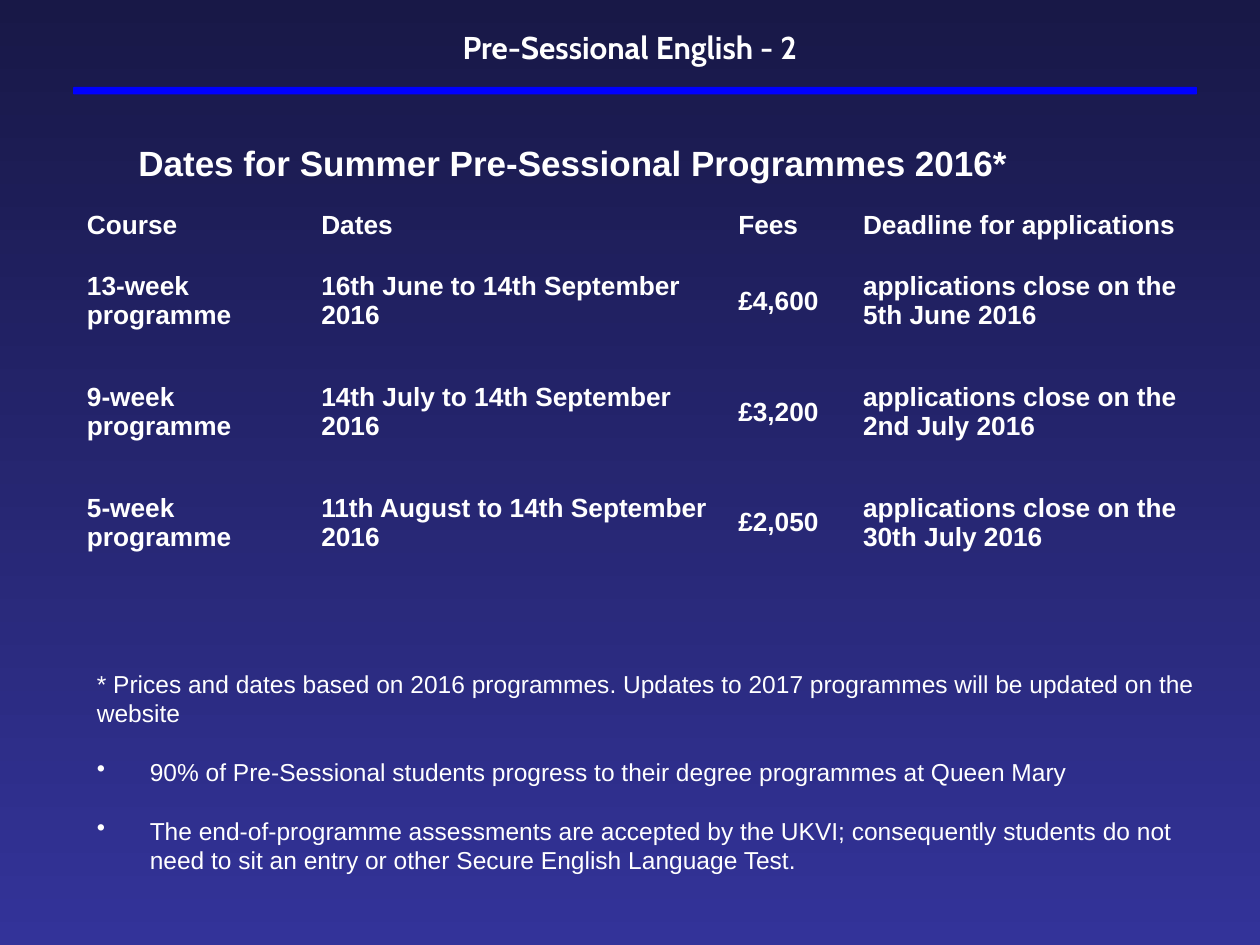
from dataclasses import dataclass

from lxml.etree import SubElement
from pptx import Presentation
from pptx.dml.color import RGBColor
from pptx.enum.shapes import MSO_SHAPE
from pptx.enum.text import MSO_ANCHOR, PP_ALIGN
from pptx.oxml.ns import qn
from pptx.util import Inches, Pt

WIDE, HIGH = Inches(10), Inches(7.5)
PLAIN = "{2D5ABB26-0587-4C30-8999-92F81FD0307C}"


@dataclass(frozen=True)
class Theme:
    top: RGBColor = RGBColor.from_string("181847")
    base: RGBColor = RGBColor.from_string("333399")
    rule: RGBColor = RGBColor.from_string("0000FF")
    ink: RGBColor = RGBColor.from_string("FFFFFF")
    body: str = "Arial"
    head: str = "Cabin"
    title: int = 18
    sub: int = 20
    cell: int = 15
    note: int = 14


THEME = Theme()

COLS = [18.6, 33.1, 9.9, 26.6]
ROWS = [4.27, 11.73, 11.73, 11.73, 3.73]
DATA = [
    ("Course", "Dates", "Fees", "Deadline for applications"),
    ("13-week programme", "16th June to 14th September 2016", "£4,600",
     "applications close on the 5th June 2016"),
    ("9-week programme", "14th July to 14th September 2016", "£3,200",
     "applications close on the 2nd July 2016"),
    ("5-week programme", "11th August to 14th September 2016", "£2,050",
     "applications close on the 30th July 2016"),
    ("", "", "", ""),
]
LEAD = ("* Prices and dates based on 2016 programmes. "
        "Updates to 2017 programmes will be updated on the website")
POINTS = [
    "90% of Pre-Sessional students progress to their degree programmes at Queen Mary",
    "The end-of-programme assessments are accepted by the UKVI; consequently students "
    "do not need to sit an entry or other Secure English Language Test.",
]


def across(share):
    """Length of a percentage of the slide's width."""
    return round(WIDE * share / 100)


def down(share):
    """Length of a percentage of the slide's height."""
    return round(HIGH * share / 100)


def place(x, y, w, h):
    return across(x), down(y), across(w), down(h)


def style(para, size, bold=False, face=THEME.body):
    font = para.font
    for item in [font] + [run.font for run in para.runs]:
        item.name, item.size, item.bold = face, Pt(size), bold
        item.color.rgb = THEME.ink


def paint(slide):
    fill = slide.background.fill
    fill.gradient()
    fill.gradient_angle = 270
    for stop, color in zip(fill.gradient_stops, (THEME.top, THEME.base)):
        stop.color.rgb = color


def add_rule(slide, *box):
    bar = slide.shapes.add_shape(MSO_SHAPE.ROUNDED_RECTANGLE, *place(*box))
    bar.shadow.inherit = False
    bar.fill.solid()
    bar.fill.fore_color.rgb = THEME.rule
    bar.line.fill.background()


def add_text(slide, text, *box):
    frame = slide.shapes.add_textbox(*place(*box)).text_frame
    frame.word_wrap = True
    frame.text = text
    return frame


def add_bullet(para):
    props = para._p.get_or_add_pPr()
    props.set("marL", str(across(4.2)))
    props.set("indent", str(-across(4.2)))
    SubElement(props, qn("a:buChar")).set("char", "•")


def add_notes(slide, *box):
    frame = add_text(slide, LEAD, *box)
    style(frame.paragraphs[0], THEME.note)
    for point in POINTS:
        para = frame.add_paragraph()
        para.text = point
        para.space_before = Pt(16.8)
        add_bullet(para)
        style(para, THEME.note)


def fill_cell(cell, text):
    cell.fill.background()
    cell.vertical_anchor = MSO_ANCHOR.MIDDLE
    cell.margin_left = cell.margin_right = Inches(0.02)
    cell.margin_top = cell.margin_bottom = Inches(0.02)
    cell.text = text
    style(cell.text_frame.paragraphs[0], THEME.cell, True)


def add_dates(slide, x, y):
    box = place(x, y, sum(COLS), sum(ROWS))
    table = slide.shapes.add_table(len(ROWS), len(COLS), *box).table
    table.first_row = table.horz_banding = False
    table._tbl.tblPr.find(qn("a:tableStyleId")).text = PLAIN
    for col, share in zip(table.columns, COLS):
        col.width = across(share)
    for row, share, texts in zip(table.rows, ROWS, DATA):
        row.height = down(share)
        for cell, text in zip(row.cells, texts):
            fill_cell(cell, text)


def main():
    deck = Presentation()
    deck.slide_width, deck.slide_height = WIDE, HIGH
    slide = deck.slides.add_slide(deck.slide_layouts[6])
    paint(slide)
    add_rule(slide, 5.8, 9.2, 89.2, 0.8)
    title = add_text(slide, "Pre-Sessional English - 2", 27.5, 2.27, 45, 5.33)
    title.paragraphs[0].alignment = PP_ALIGN.CENTER
    style(title.paragraphs[0], THEME.title, True, THEME.head)
    add_notes(slide, 6.7, 70.1, 89.8, 27)
    head = add_text(slide, "Dates for Summer Pre-Sessional Programmes 2016*",
                    10, 14.27, 85, 6.2)
    style(head.paragraphs[0], THEME.sub, True)
    add_dates(slide, 6.7, 21.73)
    deck.save("out.pptx")


if __name__ == "__main__":
    main()
